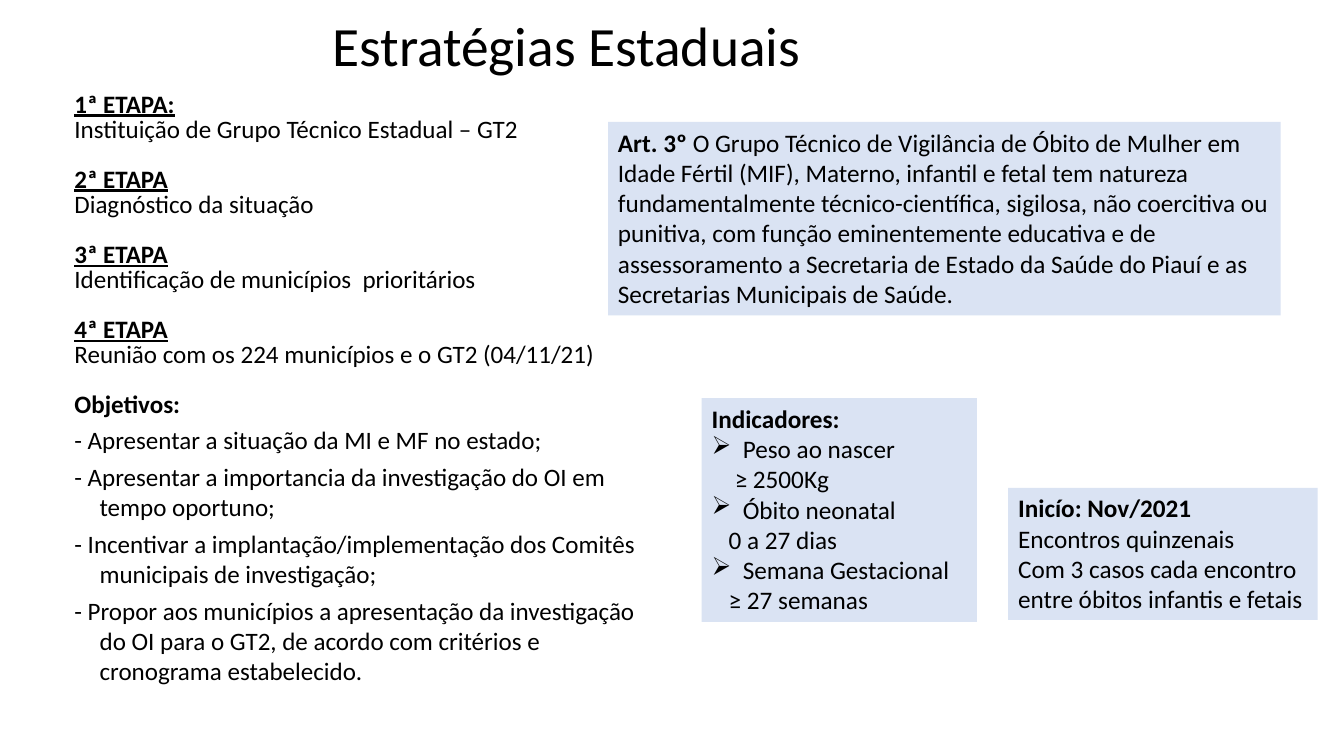
from dataclasses import dataclass

from lxml import etree
from pptx import Presentation
from pptx.dml.color import RGBColor
from pptx.enum.shapes import MSO_SHAPE
from pptx.enum.text import MSO_ANCHOR, MSO_AUTO_SIZE, PP_ALIGN
from pptx.oxml.ns import qn
from pptx.util import Inches, Pt

RECTANGLE = MSO_SHAPE.RECTANGLE
TOP, MIDDLE = MSO_ANCHOR.TOP, MSO_ANCHOR.MIDDLE
LEFT = PP_ALIGN.LEFT
NO_FIT, GROW = MSO_AUTO_SIZE.NONE, MSO_AUTO_SIZE.SHAPE_TO_FIT_TEXT


@dataclass(frozen=True)
class Theme:
    font: str = "Calibri"
    ink: RGBColor = RGBColor(0x00, 0x00, 0x00)
    panel: RGBColor = RGBColor(0xDA, 0xE3, 0xF3)
    title_size: float = 39.6
    steps_size: float = 17.9
    panel_size: float = 18


BOLD = {"bold": True}
HEADING = {"bold": True, "underline": True}
HANGING = {"margin": 0.25, "indent": -0.25}
TIGHT = {"line_spacing": 0.6, "space_before": Pt(5)}
NEW_STEP = {"line_spacing": 0.6, "space_before": Pt(22.9)}
GOAL = {"space_before": Pt(5)}
BULLET = {"margin": 0.31, "indent": -0.31, "bullet": "➢"}

STEPS = [
    ("1ª ETAPA:", "Instituição de Grupo Técnico Estadual – GT2"),
    ("2ª ETAPA", "Diagnóstico da situação"),
    ("3ª ETAPA", "Identificação de municípios  prioritários"),
    ("4ª ETAPA", "Reunião com os 224 municípios e o GT2 (04/11/21)"),
]
GOALS = [
    "- Apresentar a situação da MI e MF no estado;",
    "- Apresentar a importancia da investigação do OI em tempo oportuno;",
    "- Incentivar a implantação/implementação dos Comitês municipais de investigação;",
    "- Propor aos municípios a apresentação da investigação do OI para o GT2, "
    "de acordo com critérios e cronograma estabelecido.",
]
ARTICLE = (
    " O Grupo Técnico de Vigilância de Óbito de Mulher em Idade Fértil (MIF), "
    "Materno, infantil e fetal tem natureza fundamentalmente técnico-científica, "
    "sigilosa, não coercitiva ou punitiva, com função eminentemente educativa e de "
    "assessoramento a Secretaria de Estado da Saúde do Piauí e as Secretarias "
    "Municipais de Saúde."
)
INDICATORS = [
    ("Peso ao nascer", "≥ 2500Kg", 0.23),
    ("Óbito neonatal", "0 a 27 dias", 0.17),
    ("Semana Gestacional", "≥ 27 semanas", 0.17),
]
START = ["Encontros quinzenais", "Com 3 casos cada encontro entre óbitos infantis e fetais"]


def apply_format(target, values):
    for name, value in values.items():
        setattr(target, name, value)


def line(text, style=None, spacing=None, layout=None):
    return [(text, style or {})], spacing or {}, layout or {}


class SlideBuilder:
    COLUMNS = 100
    ROWS = 100

    def __init__(self, presentation, theme):
        self.theme = theme
        self.column = presentation.slide_width / self.COLUMNS
        self.row = presentation.slide_height / self.ROWS
        self.slide = presentation.slides.add_slide(presentation.slide_layouts[6])

    def area(self, left, top, width, height):
        return (round(left * self.column), round(top * self.row),
                round(width * self.column), round(height * self.row))

    def text_block(self, cells, lines, size, anchor=TOP):
        shape = self.slide.shapes.add_textbox(*self.area(*cells))
        self.fill_text(shape, lines, size, anchor, NO_FIT)

    def panel(self, cells, lines):
        shape = self.slide.shapes.add_shape(RECTANGLE, *self.area(*cells))
        shape.shadow.inherit = False
        shape.fill.solid()
        shape.fill.fore_color.rgb = self.theme.panel
        shape.line.fill.background()
        self.fill_text(shape, lines, self.theme.panel_size, TOP, GROW)

    def fill_text(self, shape, lines, size, anchor, fit):
        frame = shape.text_frame
        apply_format(frame, {"word_wrap": True, "vertical_anchor": anchor, "auto_size": fit})
        for index, (runs, spacing, layout) in enumerate(lines):
            paragraph = frame.add_paragraph() if index else frame.paragraphs[0]
            apply_format(paragraph, {"alignment": LEFT, **spacing})
            self.indent(paragraph, **layout)
            for text, style in runs:
                run = paragraph.add_run()
                run.text = text
                apply_format(run.font, {"name": self.theme.font, "size": Pt(size), **style})
                run.font.color.rgb = self.theme.ink

    def indent(self, paragraph, margin=0, indent=0, bullet=None):
        properties = paragraph._p.get_or_add_pPr()
        properties.set("marL", str(Inches(margin)))
        properties.set("indent", str(Inches(indent)))
        if bullet:
            etree.SubElement(properties, qn("a:buChar")).set("char", bullet)


def step_lines():
    lines = []
    for heading, detail in STEPS:
        spacing = NEW_STEP if lines else TIGHT
        lines += [line(heading, HEADING, spacing, HANGING), line(detail, None, TIGHT, HANGING)]
    lines.append(line("Objetivos:", BOLD, NEW_STEP, HANGING))
    return lines + [line(goal, None, GOAL, HANGING) for goal in GOALS]


def indicator_lines():
    lines = [line("Indicadores:", BOLD)]
    for name, limit, margin in INDICATORS:
        lines += [line(name, layout=BULLET), line(limit, layout={"margin": margin})]
    return lines


def main():
    presentation = Presentation()
    presentation.slide_width = Inches(13.33)
    presentation.slide_height = Inches(7.5)
    theme = Theme()
    builder = SlideBuilder(presentation, theme)
    title = line("Estratégias Estaduais", spacing={"line_spacing": 0.9})
    builder.text_block((24, 1.73, 67.7, 9.33), [title], theme.title_size, MIDDLE)
    builder.text_block((4.8, 12.4, 45.24, 87.6), step_lines(), theme.steps_size)
    article = [("Art. 3º", BOLD), (ARTICLE, {})], {}, {}
    builder.panel((45.24, 16.13, 50.04, 25.6), [article])
    builder.panel((52.21, 52.67, 20.48, 29.6), indicator_lines())
    start = [line("Inicío: Nov/2021", BOLD)] + [line(text) for text in START]
    builder.panel((75.02, 64.53, 23.03, 17.47), start)
    presentation.save("out.pptx")


if __name__ == "__main__":
    main()
